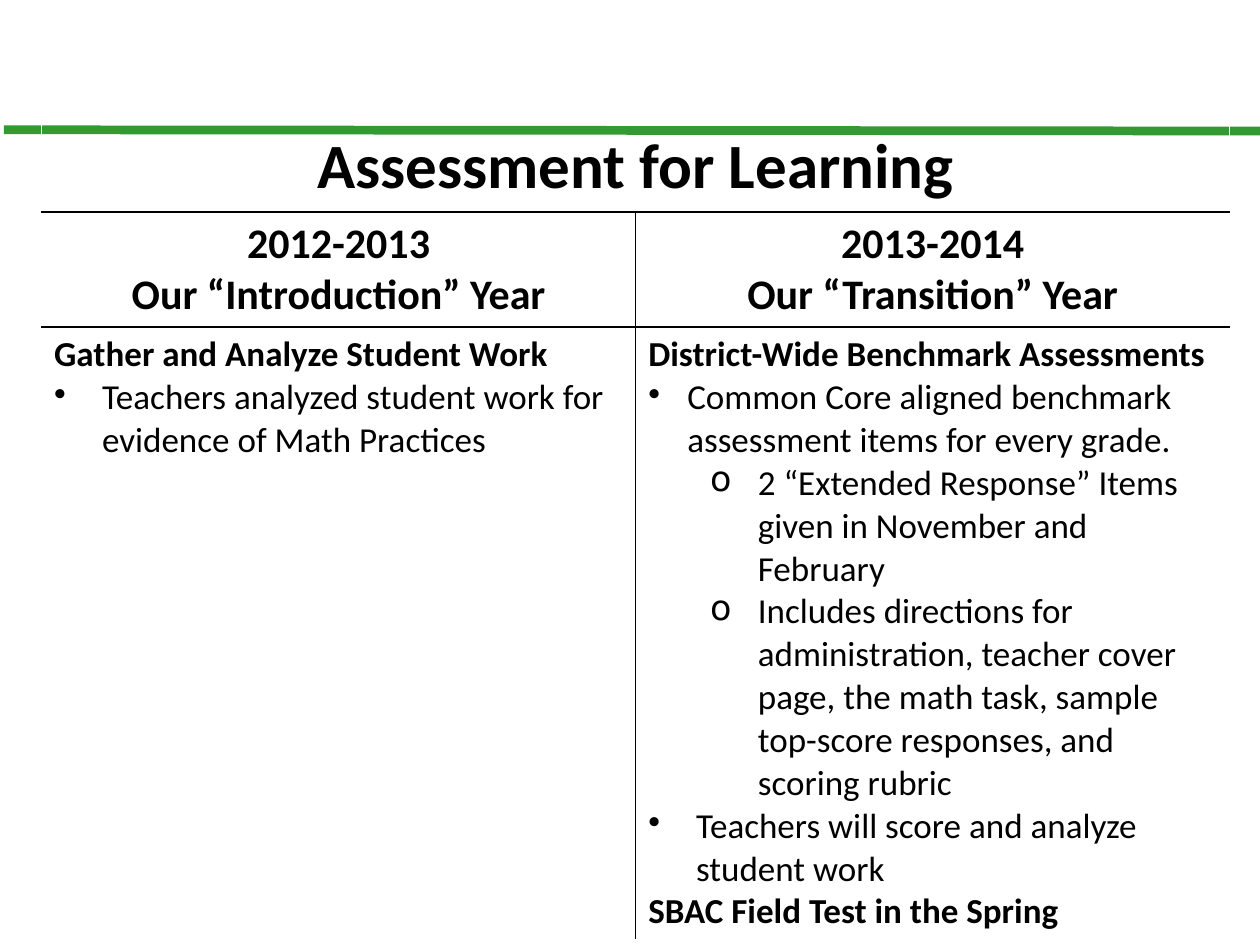
import dataclasses
import typing

import lxml.etree
import pptx
import pptx.dml.color
import pptx.enum.shapes
import pptx.enum.text
import pptx.oxml.ns
import pptx.util

WIDTH, HEIGHT = 10, 7.5
FONT = "Calibri"
BLACK, WHITE, GREEN = "000000", "FFFFFF", "339933"
TABLE_LEFT, TABLE_TOP, TABLE_WIDTH = 0.33, 0.97, 9.43
ROW_HEIGHTS = (0.6, 0.65, 4.59)
COLUMNS = 2

inch = pptx.util.Inches
qn = pptx.oxml.ns.qn


@dataclasses.dataclass(frozen=True)
class Line:
    text: str
    size: int = 20
    bold: bool = False
    centered: bool = False
    bullet: str = ""
    left: float = 0
    hanging: float = 0.38
    level: int = 0


def header(text: str, size: int = 24) -> Line:
    return Line(text, size, bold=True, centered=True)


def heading(text: str) -> Line:
    return Line(text, bold=True)


def bullet(text: str, left: float = 0.38) -> Line:
    return Line(text, bullet="•", left=left, hanging=left)


def sub_bullet(text: str) -> Line:
    return Line(text, bullet="o", left=0.87, level=1)


ROWS = (
    ((header("Assessment for Learning", 36),), ()),
    (
        (header("2012-2013"), header("Our “Introduction” Year")),
        (header("2013-2014"), header("Our “Transition” Year")),
    ),
    (
        (
            heading("Gather and Analyze Student Work"),
            bullet("Teachers analyzed student work for evidence of Math Practices"),
        ),
        (
            heading("District-Wide Benchmark Assessments"),
            bullet("Common Core aligned benchmark assessment items for every grade.", 0.31),
            sub_bullet("2 “Extended Response” Items given in November and February"),
            sub_bullet(
                "Includes directions for administration, teacher cover page, "
                "the math task, sample top-score responses, and scoring rubric"
            ),
            bullet("Teachers will score and analyze student work"),
            heading("SBAC Field Test in the Spring"),
        ),
    ),
)


def rgb(color: str) -> pptx.dml.color.RGBColor:
    return pptx.dml.color.RGBColor.from_string(color)


def add_rule(slide: typing.Any) -> None:
    line = slide.shapes.add_connector(
        pptx.enum.shapes.MSO_CONNECTOR.STRAIGHT,
        inch(0.03), inch(1.03), inch(WIDTH), inch(1.04),
    )
    line.line.color.rgb = rgb(GREEN)
    line.line.width = pptx.util.Pt(5)
    lxml.etree.SubElement(line._element.spPr, qn("a:effectLst"))


def write_line(p: typing.Any, line: Line) -> None:
    p.level = line.level
    if line.centered:
        p.alignment = pptx.enum.text.PP_ALIGN.CENTER
    if line.bullet:
        props = p._p.get_or_add_pPr()
        props.set("marL", str(inch(line.left)))
        props.set("indent", str(-inch(line.hanging)))
        lxml.etree.SubElement(props, qn("a:buChar")).set("char", line.bullet)
    r = p.add_run()
    r.text = line.text
    r.font.name = FONT
    r.font.size = pptx.util.Pt(line.size)
    r.font.bold = line.bold
    r.font.color.rgb = rgb(BLACK)


def set_borders(cell: typing.Any, row: int, column: int) -> None:
    """Black lines between cells, white ones around the table and in the title."""
    last_row = len(ROW_HEIGHTS) - 1
    inner = {
        "L": row > 0 and column > 0,
        "R": row > 0 and column < COLUMNS - 1,
        "T": row > 0,
        "B": row < last_row,
    }
    props = cell._tc.get_or_add_tcPr()
    for side, is_inner in inner.items():
        border = lxml.etree.SubElement(props, qn(f"a:ln{side}"))
        border.set("w", str(pptx.util.Pt(1)))
        fill = lxml.etree.SubElement(border, qn("a:solidFill"))
        color = lxml.etree.SubElement(fill, qn("a:srgbClr"))
        color.set("val", BLACK if is_inner else WHITE)


def add_plan_table(slide: typing.Any) -> None:
    table = slide.shapes.add_table(
        len(ROWS), COLUMNS, inch(TABLE_LEFT), inch(TABLE_TOP),
        inch(TABLE_WIDTH), inch(sum(ROW_HEIGHTS)),
    ).table
    table.first_row = table.horz_banding = False
    for row, height in zip(table.rows, ROW_HEIGHTS):
        row.height = inch(height)
    table.cell(0, 0).merge(table.cell(0, COLUMNS - 1))
    for i, row_lines in enumerate(ROWS):
        for j, lines in enumerate(row_lines):
            cell = table.cell(i, j)
            set_borders(cell, i, j)
            cell.fill.background()
            tf = cell.text_frame
            for k, line in enumerate(lines):
                write_line(tf.add_paragraph() if k else tf.paragraphs[0], line)


def main() -> None:
    prs = pptx.Presentation()
    prs.slide_width, prs.slide_height = inch(WIDTH), inch(HEIGHT)
    slide = prs.slides.add_slide(prs.slide_layouts[6])
    add_rule(slide)
    add_plan_table(slide)
    prs.save("out.pptx")


if __name__ == "__main__":
    main()
